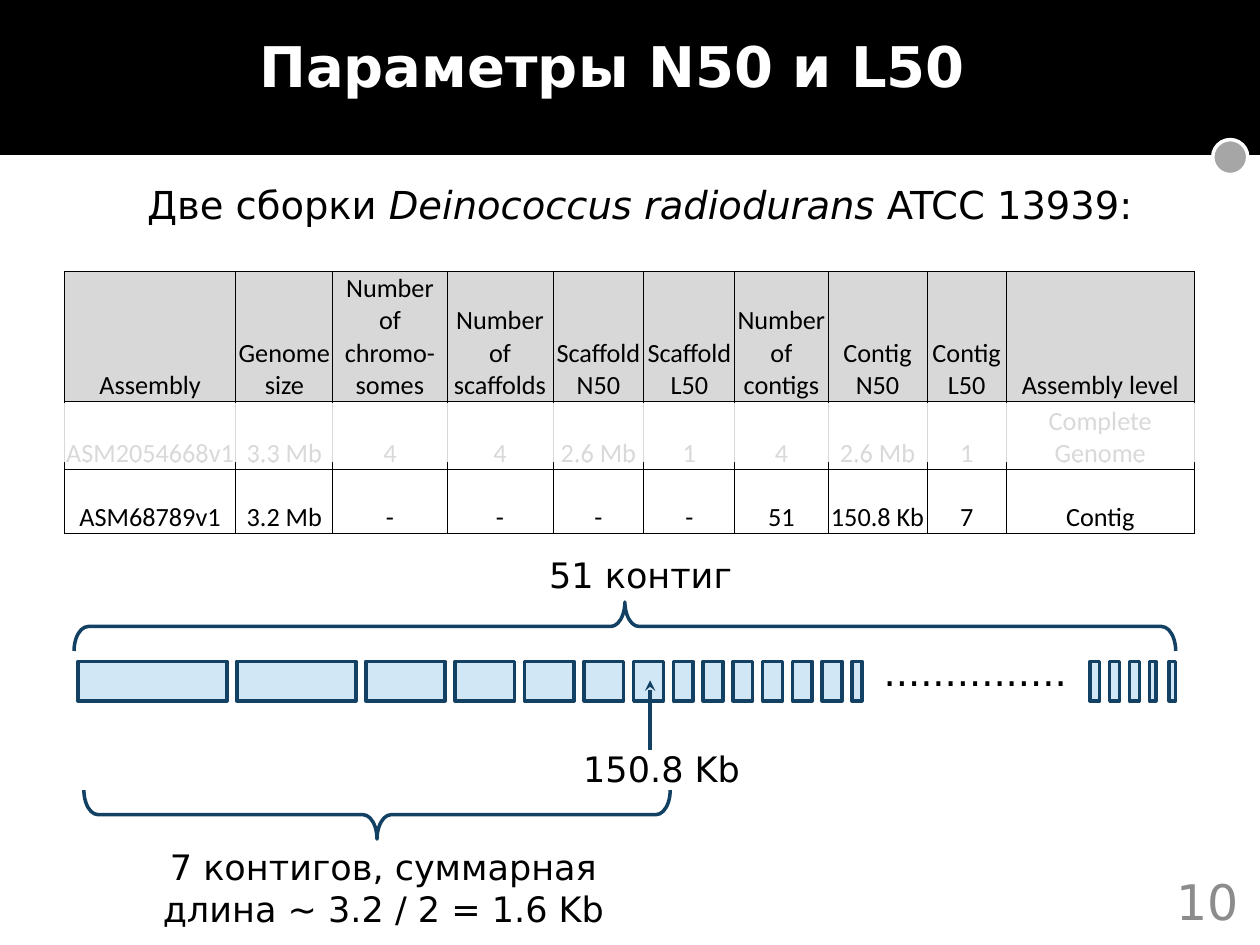
from lxml.etree import SubElement
from pptx import Presentation
from pptx.dml.color import RGBColor
from pptx.enum.shapes import MSO_CONNECTOR as Connector, MSO_SHAPE as Preset
from pptx.enum.text import MSO_ANCHOR as Anchor, PP_ALIGN as Align
from pptx.oxml.ns import qn
from pptx.util import Pt

BLACK = RGBColor(0x00, 0x00, 0x00)
WHITE = RGBColor(0xFF, 0xFF, 0xFF)
DOT_GREY = RGBColor(0xA6, 0xA6, 0xA6)
NUMBER_GREY = RGBColor(0x8C, 0x8C, 0x8C)
HEADER_GREY = RGBColor(0xD8, 0xD8, 0xD8)
PALE_BLUE = RGBColor(0xD1, 0xE7, 0xF6)
NAVY = RGBColor(0x13, 0x41, 0x63)


class SlideBuilder:
    """Draws styled elements on one slide; all lengths are in points."""
    font = "DejaVu Sans"
    table_font = "Calibri"
    line_width = 2

    def __init__(self, slide):
        self.slide = slide
        self.shapes = slide.shapes

    def place(self, shape, box):
        shape.left, shape.top, shape.width, shape.height = map(Pt, box)

    def style(self, paragraph, size, color=BLACK, align=Align.CENTER, font=None, bold=False):
        paragraph.alignment = align
        paragraph.font.name = font or self.font
        paragraph.font.size = Pt(size)
        paragraph.font.bold = bold
        paragraph.font.color.rgb = color

    def title(self, text, box, size):
        title = self.shapes.title
        self.place(title, box)
        frame = title.text_frame
        frame.text = text
        frame.vertical_anchor = Anchor.TOP
        self.style(frame.paragraphs[0], size, WHITE, bold=True)
        # Bring the title in front of the header band
        title.element.getparent().append(title.element)

    def text(self, runs, box, size, color=BLACK, align=Align.CENTER, anchor=Anchor.TOP):
        """Each run is a pair of text and italic flag."""
        frame = self.shapes.add_textbox(*map(Pt, box)).text_frame
        frame.word_wrap = True
        frame.vertical_anchor = anchor
        paragraph = frame.paragraphs[0]
        for content, italic in runs:
            run = paragraph.add_run()
            run.text = content
            if italic:
                run.font.italic = True
        self.style(paragraph, size, color, align)

    def shape(self, preset, box, fill=None, line=None, opacity=None):
        shape = self.shapes.add_shape(preset, *map(Pt, box))
        shape.shadow.inherit = False
        if fill is None:
            shape.fill.background()
        else:
            shape.fill.solid()
            shape.fill.fore_color.rgb = fill
        if opacity is not None:
            color = shape.element.spPr.find(qn("a:solidFill"))[0]
            SubElement(color, qn("a:alpha"), val=str(opacity * 1000))
        if line is None:
            shape.line.fill.background()
        else:
            shape.line.color.rgb = line
            shape.line.width = Pt(self.line_width)
        return shape

    def brace(self, left, top, width, height, rotation):
        """Place a horizontal brace by its visible box."""
        box = (left + (width - height) / 2, top + (height - width) / 2, height, width)
        brace = self.shape(Preset.LEFT_BRACE, box, line=NAVY)
        brace.adjustments[0] = 0.289
        brace.rotation = rotation

    def line(self, start, end, color, arrow=False):
        connector = self.shapes.add_connector(Connector.STRAIGHT, *map(Pt, start + end))
        connector.line.color.rgb = color
        connector.line.width = Pt(self.line_width)
        if arrow:
            SubElement(connector.line._get_or_add_ln(), qn("a:tailEnd"), type="stealth")
        SubElement(connector.element.spPr, qn("a:effectLst"))

    def border(self, cell):
        properties = cell._tc.get_or_add_tcPr()
        for index, side in enumerate(("lnL", "lnR", "lnT", "lnB")):
            line = SubElement(properties, qn(f"a:{side}"), w=str(Pt(0.5)))
            fill = SubElement(line, qn("a:solidFill"))
            SubElement(fill, qn("a:srgbClr"), val=str(BLACK))
            properties.insert(index, line)

    def table(self, rows, left, top, widths, heights, size):
        box = (left, top, sum(widths), sum(heights))
        table = self.shapes.add_table(len(rows), len(widths), *map(Pt, box)).table
        table.first_row = table.horz_banding = False
        for column, width in zip(table.columns, widths):
            column.width = Pt(width)
        for row, height in zip(table.rows, heights):
            row.height = Pt(height)
        for row_index, row in enumerate(rows):
            for column_index, content in enumerate(row):
                cell = table.cell(row_index, column_index)
                cell.text = content
                cell.vertical_anchor = Anchor.BOTTOM
                cell.margin_left = cell.margin_right = cell.margin_top = Pt(0.7)
                cell.margin_bottom = 0
                if row_index == 0:
                    cell.fill.solid()
                    cell.fill.fore_color.rgb = HEADER_GREY
                else:
                    cell.fill.background()
                self.border(cell)
                self.style(cell.text_frame.paragraphs[0], size, font=self.table_font)


ASSEMBLIES = [
    ["Assembly", "Genome size", "Number of chromo-somes", "Number of scaffolds",
     "Scaffold N50", "Scaffold L50", "Number of contigs", "Contig N50", "Contig L50",
     "Assembly level"],
    ["ASM2054668v1", "3.3 Mb", "4", "4", "2.6 Mb", "1", "4", "2.6 Mb", "1",
     "Complete Genome"],
    ["ASM68789v1", "3.2 Mb", "-", "-", "-", "-", "51", "150.8 Kb", "7", "Contig"],
]
COLUMN_WIDTHS = [98, 55.4, 65.3, 60.5, 52, 52, 53.2, 56.7, 45.2, 107.5]
ROW_HEIGHTS = [72, 38.9, 36.6]

# Contig widths in units; neighbours are one unit apart
UNIT = 5.67
LONG_CONTIGS = [15, 12, 8, 6, 5, 4, 3] + [2] * 6 + [1]
SHORT_CONTIGS = [1, 1, 1, 0.65, 0.65]
CONTIG_TOP, CONTIG_HEIGHT = 378, 22.5


def main():
    presentation = Presentation()
    presentation.slide_width, presentation.slide_height = Pt(720), Pt(540)
    slide = presentation.slides.add_slide(presentation.slide_layouts[5])
    builder = SlideBuilder(slide)

    # Header band, slide number and title
    builder.shape(Preset.RECTANGLE, (0, 0, 720, 88.6), BLACK)
    builder.line((0, 90), (696, 90), WHITE)
    builder.shape(Preset.OVAL, (693, 79.8, 20, 20), DOT_GREY, WHITE)
    builder.text([("10", False)], (547, 500.5, 168, 29), 28, NUMBER_GREY, Align.RIGHT,
                 Anchor.MIDDLE)
    builder.title("Параметры N50 и L50", (0, 14.4, 700, 46), 32)

    # Assembly table
    builder.table(ASSEMBLIES, 36.8, 155.2, COLUMN_WIDTHS, ROW_HEIGHTS, 15)
    builder.text([("Две сборки ", False), ("Deinococcus radiodurans ", True),
                  ("ATCC 13939:", False)], (70.6, 100, 590, 34), 22)

    # Contigs, longest first
    left = 44.6
    for units in LONG_CONTIGS:
        builder.shape(Preset.RECTANGLE, (left, CONTIG_TOP, units * UNIT, CONTIG_HEIGHT),
                      PALE_BLUE, NAVY)
        left += (units + 1) * UNIT
    for index, units in enumerate(SHORT_CONTIGS):
        builder.shape(Preset.RECTANGLE, (622.8 + index * 2 * UNIT, CONTIG_TOP,
                                         units * UNIT, CONTIG_HEIGHT), PALE_BLUE, NAVY)
    builder.text([("...............", False)], (469.5, 366.5, 175.7, 34), 22)

    # Braces, arrow and their labels
    builder.brace(48, 451.5, 335, 28, 270)
    builder.brace(42.3, 344, 629.5, 28, 90)
    builder.line((371.5, 428.4), (371.5, 388.8), NAVY, arrow=True)
    builder.text([("150.8 Kb", False)], (326.2, 423.4, 113, 31.7), 20, align=Align.LEFT)
    builder.text([("51 контиг", False)], (201.6, 312.5, 329, 31.7), 20)

    # Veil that fades the first assembly
    builder.shape(Preset.RECTANGLE, (31, 230.4, 657.4, 33.8), WHITE, opacity=85)
    builder.text([("7 контигов, суммарная длина ~ 3.2 / 2 = 1.6 Kb", False)],
                 (54.7, 479.5, 329, 55.4), 20)

    presentation.save("out.pptx")


if __name__ == "__main__":
    main()
